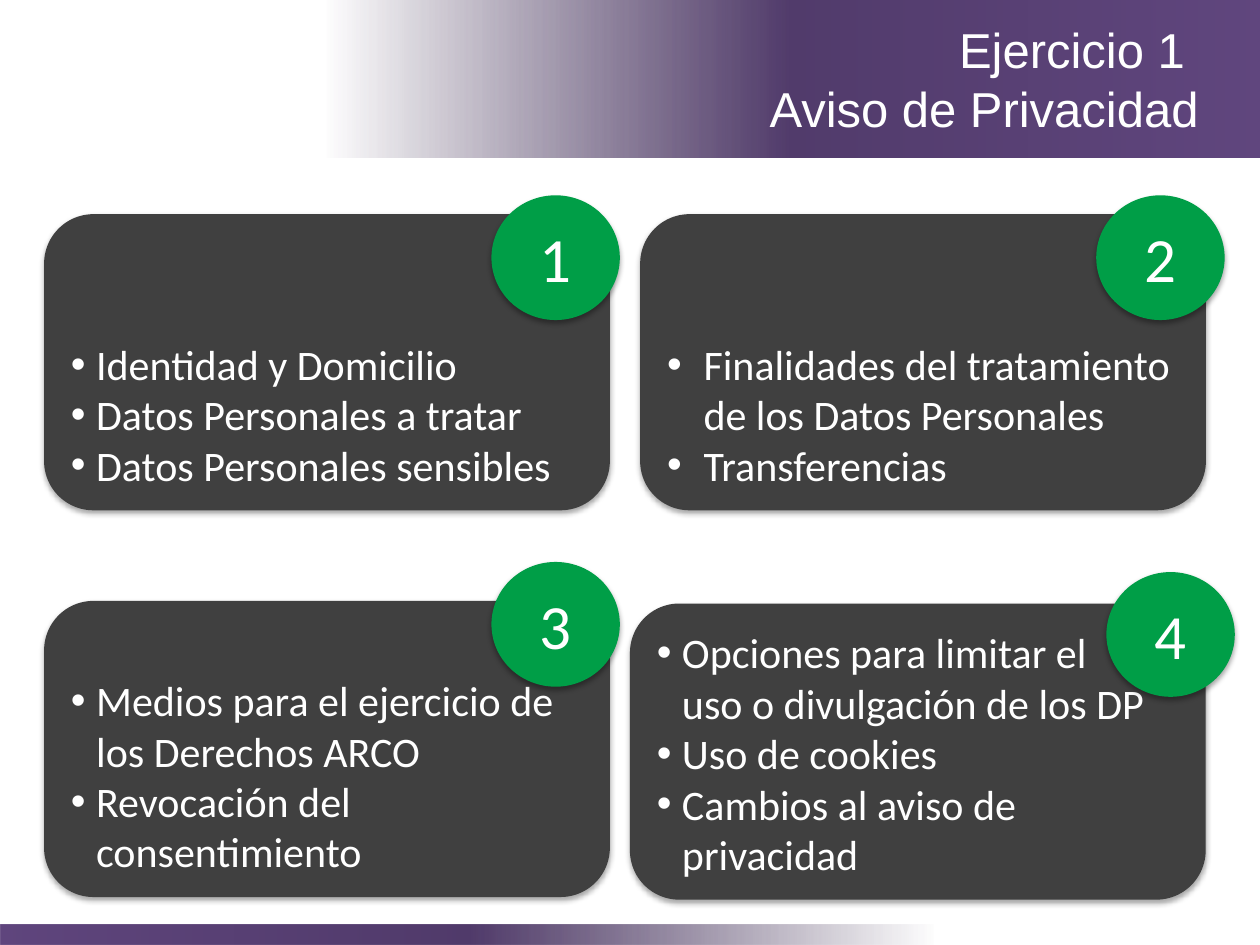
import pptx
import pptx.util
import pptx.oxml
import pptx.oxml.ns
import pptx.dml.color
import pptx.enum.shapes
import pptx.enum.text

Pt = pptx.util.Pt
Kind = pptx.enum.shapes.MSO_SHAPE
Align = pptx.enum.text.PP_ALIGN
Anchor = pptx.enum.text.MSO_ANCHOR
qn = pptx.oxml.ns.qn
NS = pptx.oxml.ns.nsdecls("a")

HUES = {"dark": "39294B", "mid": "513B6B", "light": "60467E",
        "card": "404040", "dot": "009E47", "text": "FFFFFF", "shade": "000000"}


class Deck:
    def __init__(self):
        self.file = pptx.Presentation()
        self.file.slide_width, self.file.slide_height = Pt(720), Pt(540)
        self.slide = self.file.slides.add_slide(self.file.slide_layouts[6])
        self.fonts = {
            "title": {"name": "Arial", "size": Pt(28)},
            "card": {"name": "Calibri", "size": Pt(24)},
            "dot": {"name": "Calibri", "size": Pt(36)},
        }

    def shape(self, kind, box, hue=None):
        item = self.slide.shapes.add_shape(kind, *map(Pt, box))
        item.shadow.inherit = False
        item.line.fill.background()
        if hue:
            item.fill.solid()
            item.fill.fore_color.rgb = pptx.dml.color.RGBColor.from_string(HUES[hue])
        return item

    def shade(self, item):
        item._element.spPr.find(qn("a:effectLst")).append(pptx.oxml.parse_xml(
            f'<a:outerShdw {NS} blurRad="{Pt(3.1)}" dist="{Pt(1.8)}" dir="5400000" '
            f'rotWithShape="0"><a:srgbClr val="{HUES["shade"]}">'
            '<a:alpha val="35000"/></a:srgbClr></a:outerShdw>'))

    def band(self, box, turn=0):
        item = self.shape(Kind.RECTANGLE, box)
        item.rotation = turn
        stops = "".join(
            f'<a:gs pos="{pos * 1000}"><a:srgbClr val="{HUES[hue]}">'
            f'<a:alpha val="{alpha * 1000}"/></a:srgbClr></a:gs>'
            for pos, hue, alpha in ((0, "dark", 0), (50, "mid", 100), (100, "light", 100)))
        item._element.spPr.find(qn("a:prstGeom")).addnext(pptx.oxml.parse_xml(
            f'<a:gradFill {NS} rotWithShape="1"><a:gsLst>{stops}</a:gsLst>'
            '<a:lin ang="0" scaled="0"/></a:gradFill>'))

    def words(self, item, lines, style, align, anchor, hang=0):
        frame = item.text_frame
        frame.word_wrap = True
        frame.vertical_anchor = anchor
        for num, line in enumerate(lines):
            para = frame.add_paragraph() if num else frame.paragraphs[0]
            para.text = line
            para.alignment = align
            if hang:
                props = para._p.get_or_add_pPr()
                props.set("marL", str(Pt(hang)))
                props.set("indent", str(-Pt(hang)))
                props.append(pptx.oxml.parse_xml(f'<a:buFont {NS} typeface="Arial"/>'))
                props.append(pptx.oxml.parse_xml(f'<a:buChar {NS} char="•"/>'))
            for run in para.runs:
                for key, value in self.fonts[style].items():
                    setattr(run.font, key, value)
                run.font.color.rgb = pptx.dml.color.RGBColor.from_string(HUES["text"])

    def title(self, box, lines):
        item = self.slide.shapes.add_textbox(*map(Pt, box))
        self.words(item, lines, "title", Align.RIGHT, Anchor.MIDDLE)

    def card(self, box, lines, hang):
        item = self.shape(Kind.ROUNDED_RECTANGLE, box, "card")
        self.shade(item)
        self.words(item, lines, "card", Align.LEFT, Anchor.BOTTOM, hang)

    def dot(self, left, top, label):
        item = self.shape(Kind.OVAL, (left, top, 73.4, 71.3), "dot")
        self.shade(item)
        self.words(item, [label], "dot", Align.CENTER, Anchor.MIDDLE)


CARDS = [
    ((25.2, 122.4, 323.3), (280.8, 111.6), 14.4,
     ["Identidad y Domicilio", "Datos Personales a tratar",
      "Datos Personales sensibles"]),
    ((365.8, 122.4, 323.3), (626.4, 111.6), 20.9,
     ["Finalidades del tratamiento de los Datos Personales", "Transferencias"]),
    ((25.2, 343.4, 323.3), (280.8, 321.1), 14.4,
     ["Medios para el ejercicio de los Derechos ARCO",
      "Revocación del consentimiento"]),
    ((360, 344.9, 329), (632.2, 326.9), 14.4,
     ["Opciones para limitar el\vuso o divulgación de los DP", "Uso de cookies",
      "Cambios al aviso de privacidad"]),
]


def main():
    deck = Deck()
    deck.band((185.8, 0, 534.2, 90))
    deck.band((0, 528.5, 534.2, 11.5), 180)
    deck.title((343.4, 0, 348.5, 90), ["Ejercicio 1 ", "Aviso de Privacidad"])
    for box, spot, hang, lines in CARDS:
        deck.card((*box, 169.2), lines, hang)
    for num, (box, spot, hang, lines) in enumerate(CARDS, 1):
        deck.dot(*spot, str(num))
    deck.file.save("out.pptx")


if __name__ == "__main__":
    main()
